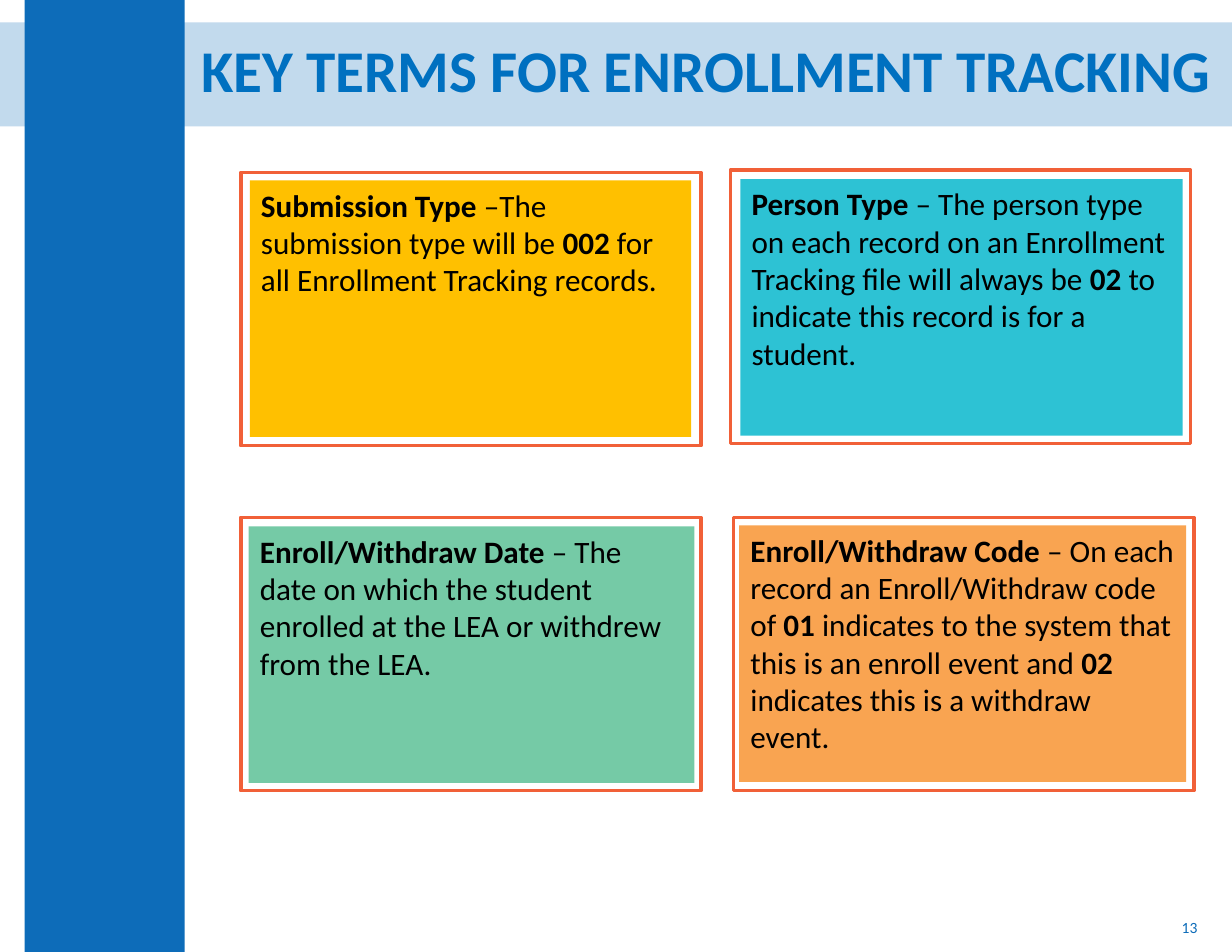
from dataclasses import dataclass

from lxml.etree import SubElement
from pptx import Presentation
from pptx.dml.color import RGBColor
from pptx.enum.shapes import MSO_SHAPE
from pptx.enum.text import MSO_ANCHOR, MSO_AUTO_SIZE, PP_ALIGN
from pptx.oxml.ns import qn
from pptx.util import Inches, Pt


@dataclass(frozen=True)
class Theme:
    font: str = "Calibri"
    blue: str = "0D6CB9"
    title_blue: str = "0070C0"
    frame: str = "F16038"
    white: str = "FFFFFF"
    black: str = "000000"
    yellow: str = "FFC000"
    cyan: str = "2DC2D4"
    green: str = "75CAA6"
    orange: str = "F9A451"
    title_size: int = 38
    body_size: int = 20
    number_size: int = 10


THEME = Theme()
COMPARISON_LAYOUT = 4
FRAME_SIZE = (4.11, 2.44)

# Frame position, card box, card colour, text with **bold** parts
TERMS = [
    ((2.15, 1.54), (2.23, 1.61, 3.94, 2.29), THEME.yellow,
     "**Submission Type **–The submission type will be **002** for all "
     "Enrollment Tracking records."),
    ((6.52, 1.52), (6.61, 1.6, 3.95, 2.29), THEME.cyan,
     "**Person Type **– The person type on each record on an Enrollment "
     "Tracking file will always be **02** to indicate this record is for a "
     "student."),
    ((2.15, 4.62), (2.22, 4.7, 3.98, 2.29), THEME.green,
     "**Enroll/Withdraw Date **– The date on which the student enrolled at "
     "the LEA or withdrew from the LEA."),
    ((6.55, 4.62), (6.6, 4.69, 3.99, 2.29), THEME.orange,
     "**Enroll/Withdraw Code **– On each record an Enroll/Withdraw code of "
     "**01** indicates to the system that this is an enroll event and **02** "
     "indicates this is a withdraw event."),
]


def paint(shape, color):
    shape.fill.solid()
    shape.fill.fore_color.rgb = RGBColor.from_string(color)


def add_rectangle(slide, box, fill, line=None, opacity=None):
    shape = slide.shapes.add_shape(MSO_SHAPE.RECTANGLE, *map(Inches, box))
    shape.shadow.inherit = False
    paint(shape, fill)
    if opacity is not None:
        color = shape.fill._xPr.find(f"{qn('a:solidFill')}/{qn('a:srgbClr')}")
        SubElement(color, qn("a:alpha"), val=str(opacity * 1000))
    if line:
        shape.line.color.rgb = RGBColor.from_string(line)
        shape.line.width = Pt(2.25)
    else:
        shape.line.fill.background()


def write_text(shape, text, size, color, align=PP_ALIGN.LEFT, spacing=1.0,
               anchor=MSO_ANCHOR.TOP, bold=False):
    """Fill the shape with one paragraph; **marked** parts become bold."""
    frame = shape.text_frame
    frame.word_wrap = True
    frame.auto_size = MSO_AUTO_SIZE.NONE
    frame.vertical_anchor = anchor
    paragraph = frame.paragraphs[0]
    paragraph.alignment = align
    paragraph.line_spacing = spacing
    paragraph.space_before = Pt(0)
    properties = paragraph._p.get_or_add_pPr()
    properties.set("marL", "0")
    properties.set("indent", "0")
    SubElement(properties, qn("a:buNone"))
    for index, part in enumerate(text.split("**")):
        if part:
            run = paragraph.add_run()
            run.text = part
            run.font.name = THEME.font
            run.font.size = Pt(size)
            run.font.bold = bold or index % 2 == 1
            run.font.color.rgb = RGBColor.from_string(color)


def place(slide, placeholder, box):
    """Position a placeholder and bring it to the front."""
    (placeholder.left, placeholder.top,
     placeholder.width, placeholder.height) = map(Inches, box)
    slide.shapes._spTree.append(placeholder._element)


def add_background(slide):
    add_rectangle(slide, (0, 0.2, 11, 0.93), THEME.blue, opacity=25)
    for position, *_ in TERMS:
        add_rectangle(slide, position + FRAME_SIZE, THEME.white, THEME.frame)
    add_rectangle(slide, (0.22, 0, 1.43, 8.5), THEME.blue)


def add_slide_number(slide, number):
    box = slide.shapes.add_textbox(*map(Inches, (8.31, 8.05, 2.48, 0.45)))
    write_text(box, number, THEME.number_size, THEME.blue,
               align=PP_ALIGN.RIGHT, anchor=MSO_ANCHOR.MIDDLE)


def main():
    presentation = Presentation()
    presentation.slide_width = Inches(11)
    presentation.slide_height = Inches(8.5)
    layout = presentation.slide_layouts[COMPARISON_LAYOUT]
    slide = presentation.slides.add_slide(layout)
    title, *cards = list(slide.placeholders)

    add_background(slide)
    add_slide_number(slide, "13")
    place(slide, title, (1.61, 0.19, 9.39, 0.93))
    write_text(title, "KEY TERMS FOR ENROLLMENT TRACKING", THEME.title_size,
               THEME.title_blue, align=PP_ALIGN.CENTER, spacing=0.9,
               anchor=MSO_ANCHOR.MIDDLE, bold=True)
    for card, (_, box, color, text) in zip(cards, TERMS):
        place(slide, card, box)
        paint(card, color)
        write_text(card, text, THEME.body_size, THEME.black)

    presentation.save("out.pptx")


if __name__ == "__main__":
    main()
